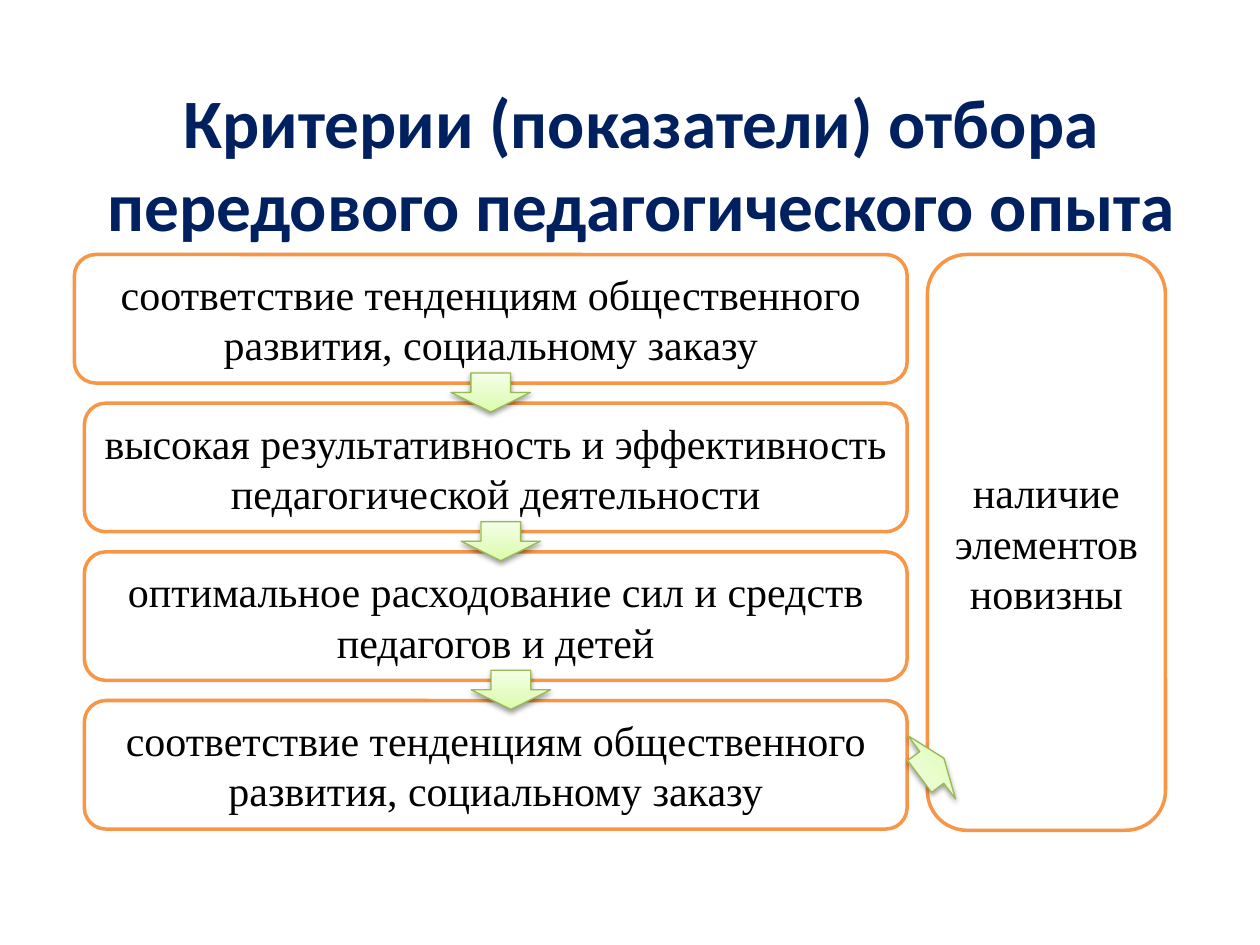
from lxml import etree
from pptx import Presentation
from pptx.dml.color import RGBColor
from pptx.enum.shapes import MSO_SHAPE as Shape
from pptx.enum.text import MSO_ANCHOR as Anchor, PP_ALIGN as Align
from pptx.util import Inches, Pt

NAVY = RGBColor(0x00, 0x20, 0x60)
BLACK = RGBColor(0x00, 0x00, 0x00)
WHITE = RGBColor(0xFF, 0xFF, 0xFF)
ORANGE = RGBColor(0xF7, 0x96, 0x46)
GREEN = RGBColor(0x98, 0xB9, 0x55)

DRAWING_NS = 'xmlns:a="http://schemas.openxmlformats.org/drawingml/2006/main"'
ARROW_GRADIENT = f"""<a:gradFill {DRAWING_NS} rotWithShape="1"><a:gsLst>
<a:gs pos="0"><a:srgbClr val="DAFDA7"/></a:gs>
<a:gs pos="35000"><a:srgbClr val="E4FCC2"/></a:gs>
<a:gs pos="100000"><a:srgbClr val="F5FFE7"/></a:gs>
</a:gsLst><a:lin ang="16200000" scaled="1"/></a:gradFill>"""
ARROW_SHADOW = f"""<a:effectLst {DRAWING_NS}>
<a:outerShdw blurRad="{Pt(3.1)}" dist="{Pt(1.6)}" dir="5400000" rotWithShape="0">
<a:srgbClr val="000000"><a:alpha val="38000"/></a:srgbClr>
</a:outerShdw></a:effectLst>"""


class CriteriaSlide:
    title_font = "Calibri"
    body_font = "Times New Roman"

    def __init__(self, slide):
        self.shapes = slide.shapes

    def set_text(self, frame, text, font_name, size, color, bold=False):
        frame.word_wrap = True
        paragraph = frame.paragraphs[0]
        paragraph.text = text
        paragraph.alignment = Align.CENTER
        font = paragraph.font
        font.name, font.size, font.bold = font_name, Pt(size), bold
        font.color.rgb = color

    def title(self, text, left, top, width, height):
        box = self.shapes.add_textbox(
            Inches(left), Inches(top), Inches(width), Inches(height))
        frame = box.text_frame
        frame.vertical_anchor = Anchor.BOTTOM
        frame.margin_top = 0
        frame.margin_bottom = Inches(0.29)
        self.set_text(frame, text, self.title_font, 39.6, NAVY, bold=True)

    def criterion(self, text, left, top, width, height):
        card = self.shapes.add_shape(
            Shape.ROUNDED_RECTANGLE,
            Inches(left), Inches(top), Inches(width), Inches(height))
        card.shadow.inherit = False
        card.fill.solid()
        card.fill.fore_color.rgb = WHITE
        card.line.color.rgb = ORANGE
        card.line.width = Pt(2)
        card.text_frame.vertical_anchor = Anchor.MIDDLE
        self.set_text(card.text_frame, text, self.body_font, 24, BLACK)

    def arrow(self, left, top, height, rotation=0):
        arrow = self.shapes.add_shape(
            Shape.DOWN_ARROW,
            Inches(left), Inches(top), Inches(0.63), Inches(height))
        arrow.rotation = rotation
        properties = arrow.element.spPr
        properties.append(etree.fromstring(ARROW_GRADIENT))
        arrow.line.color.rgb = GREEN
        arrow.line.width = Pt(0.75)
        properties.append(etree.fromstring(ARROW_SHADOW))


def main():
    presentation = Presentation()
    presentation.slide_width = Inches(10)
    presentation.slide_height = Inches(7.5)
    slide = CriteriaSlide(
        presentation.slides.add_slide(presentation.slide_layouts[6]))

    # Title
    slide.title("Критерии (показатели) отбора передового педагогического опыта",
                0.59, 0.99, 9, 1.25)

    # Column of criteria; the first card reaches further left
    criteria = [
        "соответствие тенденциям общественного развития, социальному заказу",
        "высокая результативность и эффективность педагогической деятельности",
        "оптимальное расходование сил и средств педагогов и детей",
        "соответствие тенденциям общественного развития, социальному заказу",
    ]
    column_top, step, column_right = 2.02, 1.18, 7.2
    for row, criterion in enumerate(criteria):
        left = 0.67 if row else 0.59
        slide.criterion(criterion, left, column_top + row * step,
                        column_right - left, 1.02)

    # Novelty criterion beside the column
    slide.criterion("наличие элементов новизны", 7.36, column_top, 1.89, 4.57)

    # Arrows between the criteria, each a little further right
    for gap in range(len(criteria) - 1):
        slide.arrow(3.58 + gap * 0.08, 2.96 + gap * step, 0.31)

    # Arrow between the last criterion and novelty
    slide.arrow(7.08, 5.97, 0.24, rotation=233)

    presentation.save("out.pptx")


if __name__ == "__main__":
    main()
